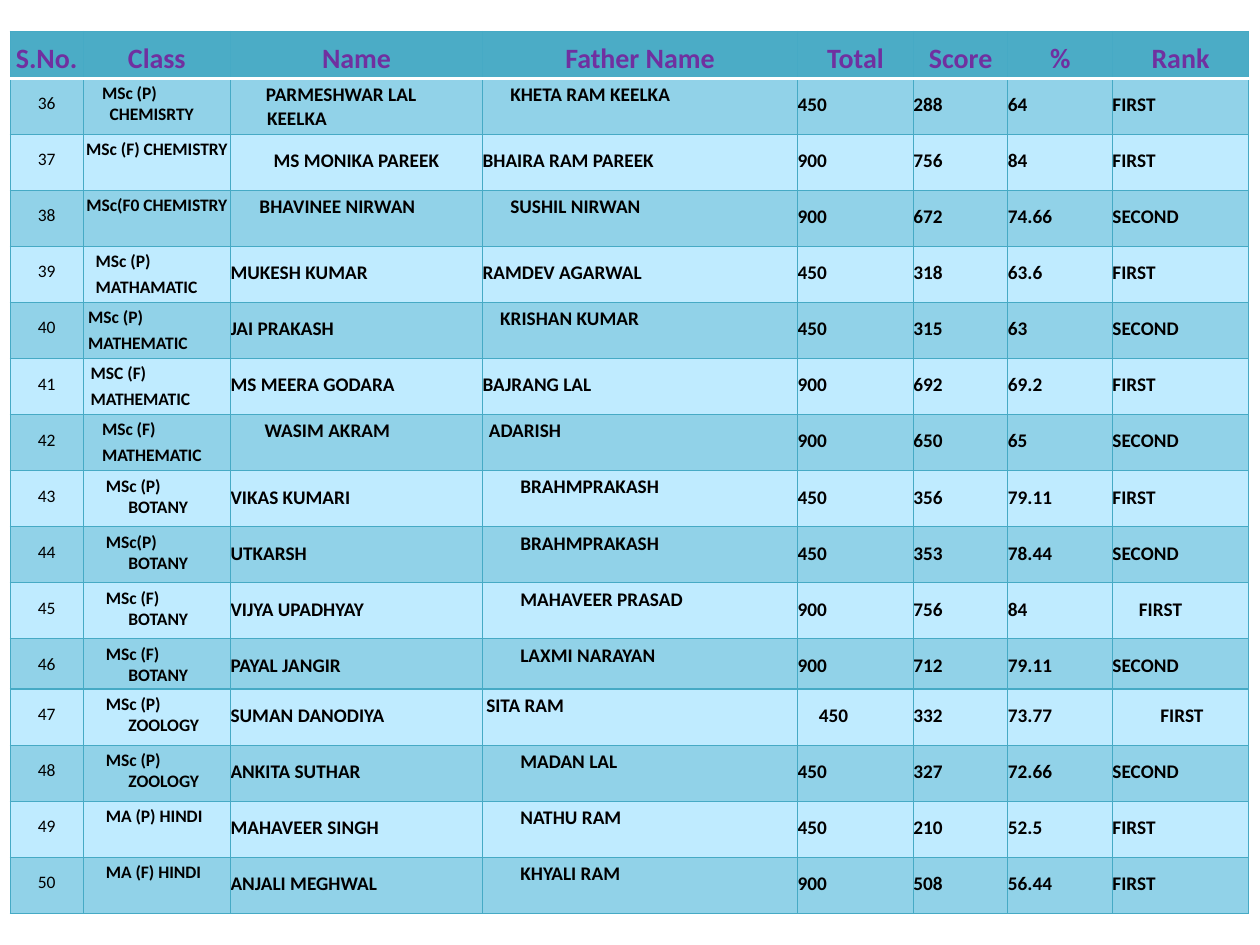
from collections import namedtuple

from pptx import Presentation
from pptx.dml.color import RGBColor
from pptx.enum.text import PP_ALIGN
from pptx.oxml.ns import qn
from pptx.util import Emu, Inches, Pt
from lxml import etree

CENTER, LEFT = PP_ALIGN.CENTER, PP_ALIGN.LEFT
FONT = "Calibri"
HEADER_FILL, DARK_BAND, LIGHT_BAND = "4BACC6", "91D2E8", "BFEBFF"
GRID_LINE, WHITE, BLACK, PURPLE = "46AAC5", "FFFFFF", "000000", "7030A0"

# Table grid in inches; the body rows share what the two odd rows leave
TABLE_LEFT, TABLE_TOP, TABLE_HEIGHT = 0.08, 0.25, 7
COLUMNS = [0.58, 1.17, 2, 2.5, 0.92, 0.75, 0.83, 1.08]
HEADER_HEIGHT, SHORT_HEIGHT, SHORT_ROW = 0.37, 0.4, 11
HIGH_INSET, LOW_INSET, HEADER_INSET = 0.04, 0.12, 0.08
NUMBER_COL, CLASS_COL, FATHER_COL = 0, 1, 3

# A cell whose text is shifted: left margin, first-line indent, right inset
Shifted = namedtuple("Shifted", "text left first right", defaults=(0, 0))
Centred = namedtuple("Centred", "text")


def student_class(text, left=0.36, first=-0.18):
    return Shifted(text, left, first, 0.15)


def father(text):
    return Shifted(text, 0.27, 0.03)


HEADERS = ["S.No.", "Class", "Name", "Father Name", "Total", "Score", "%", "Rank"]
FIRST_NUMBER = 36
STUDENTS = [
    (student_class("MSc (P) CHEMISRTY", 0.21, -0.06),
     Shifted("PARMESHWAR LAL KEELKA", 0.29, -0.01, 0.2),
     Shifted("KHETA RAM KEELKA", 0.29, -0.07), "450", "288", "64", "FIRST"),
    (Centred("MSc (F) CHEMISTRY"), Centred("MS MONIKA PAREEK"),
     "BHAIRA RAM PAREEK", "900", "756", "84", "FIRST"),
    (Centred("MSc(F0 CHEMISTRY"), Shifted("BHAVINEE NIRWAN", 0.23),
     Shifted("SUSHIL NIRWAN", 0.22), "900", "672", "74.66", "SECOND"),
    (student_class("MSc (P)\nMATHAMATIC", first=-0.26), "MUKESH KUMAR",
     "RAMDEV AGARWAL", "450", "318", "63.6", "FIRST"),
    (student_class("MSc (P)\nMATHEMATIC", first=-0.32), "JAI PRAKASH",
     Shifted("KRISHAN KUMAR", 0.38, -0.24), "450", "315", "63", "SECOND"),
    (student_class("MSC (F)\nMATHEMATIC", first=-0.3), "MS MEERA GODARA",
     "BAJRANG LAL", "900", "692", "69.2", "FIRST"),
    (student_class("MSc (F)\nMATHEMATIC", first=-0.21),
     Shifted("WASIM AKRAM", 0.29, -0.02),
     Shifted("ADARISH", 0.29, -0.24), "900", "650", "65", "SECOND"),
    (student_class("MSc (P) BOTANY"), "VIKAS KUMARI",
     father("BRAHMPRAKASH"), "450", "356", "79.11", "FIRST"),
    (student_class("MSc(P) BOTANY"), "UTKARSH",
     father("BRAHMPRAKASH"), "450", "353", "78.44", "SECOND"),
    (student_class("MSc (F) BOTANY"), "VIJYA UPADHYAY",
     father("MAHAVEER PRASAD"), "900", "756", "84", Shifted("FIRST", 0.21)),
    (student_class("MSc (F) BOTANY"), "PAYAL JANGIR",
     father("LAXMI NARAYAN"), "900", "712", "79.11", "SECOND"),
    (student_class("MSc (P) ZOOLOGY"), "SUMAN DANODIYA",
     Shifted("SITA RAM", 0.03), Shifted("450", 0.17), "332", "73.77",
     Shifted("FIRST", 0.38)),
    (student_class("MSc (P) ZOOLOGY"), "ANKITA SUTHAR",
     father("MADAN LAL"), "450", "327", "72.66", "SECOND"),
    (student_class("MA (P) HINDI"), "MAHAVEER SINGH",
     father("NATHU RAM"), "450", "210", "52.5", "FIRST"),
    (student_class("MA (F) HINDI"), "ANJALI MEGHWAL",
     father("KHYALI RAM"), "900", "508", "56.44", "FIRST"),
]


def colour(hex_text):
    return RGBColor.from_string(hex_text)


def set_border(cell, side, hex_text, width):
    line = etree.SubElement(cell._tc.get_or_add_tcPr(), qn(f"a:ln{side}"),
                            w=str(Pt(width)))
    fill = etree.SubElement(line, qn("a:solidFill"))
    etree.SubElement(fill, qn("a:srgbClr"), val=hex_text)


def style_cell(cell, row, fill):
    """Draw the grid lines, with a white rule under the header, and fill."""
    ruled_side = {0: "B", 1: "T"}.get(row)
    for side in "LRTB":
        if side == ruled_side:
            set_border(cell, side, WHITE, 2)
        else:
            set_border(cell, side, GRID_LINE, 0.75)
    cell.fill.solid()
    cell.fill.fore_color.rgb = colour(fill)


def write_cell(cell, text, size, hex_text, bold, align, top, shift=None):
    cell.margin_left = cell.margin_bottom = 0
    cell.margin_right = Inches(shift.right if shift else 0)
    cell.margin_top = Inches(top)
    cell.text_frame.text = text
    for index, para in enumerate(cell.text_frame.paragraphs):
        para.alignment = align
        if index:
            para.space_before = Pt(2.6)
        if shift:
            properties = para._p.get_or_add_pPr()
            properties.set("marL", str(Inches(shift.left)))
            properties.set("indent", str(Inches(shift.first)))
        para.font.name, para.font.size = FONT, Pt(size)
        para.font.bold = bold
        para.font.color.rgb = colour(hex_text)


def add_header(table):
    for col, title in enumerate(HEADERS):
        cell = table.cell(0, col)
        style_cell(cell, 0, HEADER_FILL)
        write_cell(cell, title, 16, PURPLE, True, CENTER, HEADER_INSET)


def add_student(table, row, student):
    values = (Centred(str(FIRST_NUMBER + row - 1)),) + student
    for col, value in enumerate(values):
        shift = value if isinstance(value, Shifted) else None
        centred = isinstance(value, Centred)
        text = value if isinstance(value, str) else value.text
        high = col == CLASS_COL or (shift and col <= FATHER_COL)
        cell = table.cell(row, col)
        style_cell(cell, row, DARK_BAND if row % 2 else LIGHT_BAND)
        write_cell(cell, text, 10 if col <= CLASS_COL else 11, BLACK,
                   col != NUMBER_COL, CENTER if centred else LEFT,
                   HIGH_INSET if high else LOW_INSET, shift)


def add_results_table(page):
    count = len(STUDENTS)
    table = page.shapes.add_table(
        count + 1, len(COLUMNS), Inches(TABLE_LEFT), Inches(TABLE_TOP),
        Inches(sum(COLUMNS)), Inches(TABLE_HEIGHT)).table
    for column, width in zip(table.columns, COLUMNS):
        column.width = Inches(width)
    body_height = (TABLE_HEIGHT - HEADER_HEIGHT - SHORT_HEIGHT) / (count - 1)
    odd_heights = {0: HEADER_HEIGHT, SHORT_ROW: SHORT_HEIGHT}
    for index, row in enumerate(table.rows):
        row.height = Emu(Inches(odd_heights.get(index, body_height)))
    return table


def main():
    deck = Presentation()
    deck.slide_width, deck.slide_height = Inches(10), Inches(7.5)
    page = deck.slides.add_slide(deck.slide_layouts[6])

    # Results table: header, then one row per student
    table = add_results_table(page)
    add_header(table)
    for row, student in enumerate(STUDENTS, start=1):
        add_student(table, row, student)

    deck.save("out.pptx")


if __name__ == "__main__":
    main()
